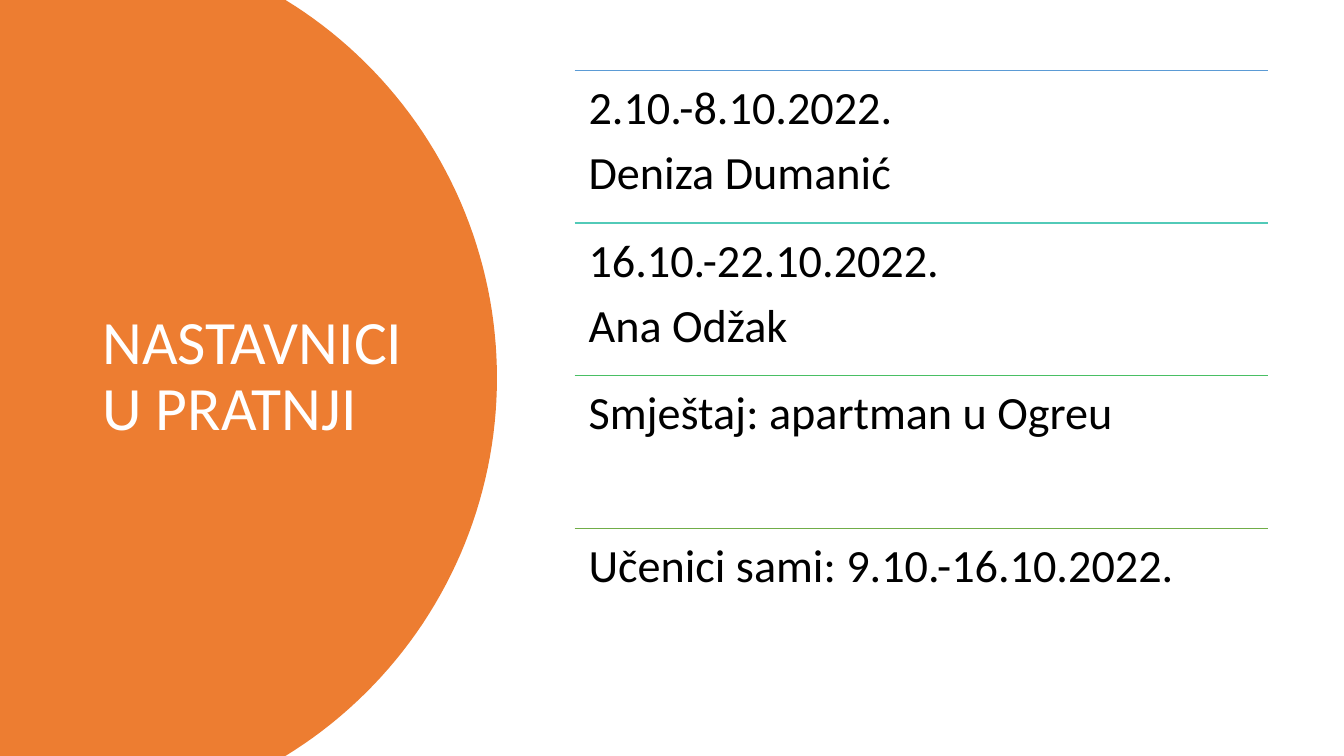
import math
import pptx
import pptx.util
import pptx.dml.color
import pptx.enum.shapes
import pptx.enum.text
import pptx.oxml

Pt = pptx.util.Pt
FONT = "Calibri"
TITLE = "NASTAVNICI U PRATNJI"
ROWS = [
    ("5B9BD5", ["2.10.-8.10.2022.", "Deniza Dumanić"]),
    ("52CAB8", ["16.10.-22.10.2022.", "Ana Odžak"]),
    ("49BF64", ["Smještaj: apartman u Ogreu"]),
    ("70AD47", ["Učenici sami: 9.10.-16.10.2022."]),
]
WIDE, HIGH = 960, 540
LEFT, TOP, SPAN, STEP = 410.4, 50.4, 495.4, 109
EDGE, RADIUS, ARCS = 355, 316.8, 80


def color(code):
    return pptx.dml.color.RGBColor.from_string(code)


def style(para, size, code):
    para.alignment = pptx.enum.text.PP_ALIGN.LEFT
    para.line_spacing = 0.9
    for run in para.runs:
        run.font.name = FONT
        run.font.size = Pt(size)
        run.font.color.rgb = color(code)


def add_disc(slide):
    half = HIGH / 2
    turn = math.asin(half / RADIUS)
    points = []
    for i in range(ARCS + 1):
        angle = turn * (2 * i / ARCS - 1)
        x = EDGE - RADIUS + RADIUS * math.cos(angle)
        y = half + RADIUS * math.sin(angle)
        points.append((Pt(x), Pt(y)))
    form = slide.shapes.build_freeform(0, 0, scale=1.0)
    form.add_line_segments(points + [(0, Pt(HIGH))], close=True)
    disc = form.convert_to_shape()
    disc.shadow.inherit = False
    disc.fill.solid()
    disc.fill.fore_color.rgb = color("ED7D31")
    disc.line.fill.background()
    return disc


def add_title(slide):
    title = slide.shapes.title
    title.left, title.top = Pt(66), Pt(50.4)
    title.width, title.height = Pt(232.5), Pt(438.5)
    frame = title.text_frame
    frame.text = TITLE
    frame.word_wrap = True
    frame.auto_size = pptx.enum.text.MSO_AUTO_SIZE.NONE
    frame.vertical_anchor = pptx.enum.text.MSO_ANCHOR.MIDDLE
    style(frame.paragraphs[0], 44, "FFFFFF")
    return title


def add_row(slide, top, code, lines):
    rule = slide.shapes.add_connector(
        pptx.enum.shapes.MSO_CONNECTOR.STRAIGHT,
        Pt(LEFT), Pt(top), Pt(LEFT + SPAN), Pt(top))
    rule.line.color.rgb = color(code)
    rule.line.width = Pt(1)
    props = rule.element.spPr
    props.append(pptx.oxml.parse_xml(
        '<a:effectLst xmlns:a="http://schemas.openxmlformats.org/drawingml/2006/main"/>'))
    box = slide.shapes.add_textbox(Pt(LEFT), Pt(top), Pt(SPAN), Pt(STEP))
    frame = box.text_frame
    frame.word_wrap = True
    frame.margin_left = frame.margin_right = Pt(10)
    frame.margin_top = frame.margin_bottom = Pt(10)
    frame.text = "\n".join(lines)
    for para in frame.paragraphs:
        style(para, 33, "000000")
        para.space_after = Pt(11)


def main():
    deck = pptx.Presentation()
    deck.slide_width, deck.slide_height = Pt(WIDE), Pt(HIGH)
    slide = deck.slides.add_slide(deck.slide_layouts[5])
    title = add_title(slide)
    disc = add_disc(slide)
    title.element.addprevious(disc.element)
    for i, (code, lines) in enumerate(ROWS):
        add_row(slide, TOP + i * STEP, code, lines)
    deck.save("out.pptx")


if __name__ == "__main__":
    main()
